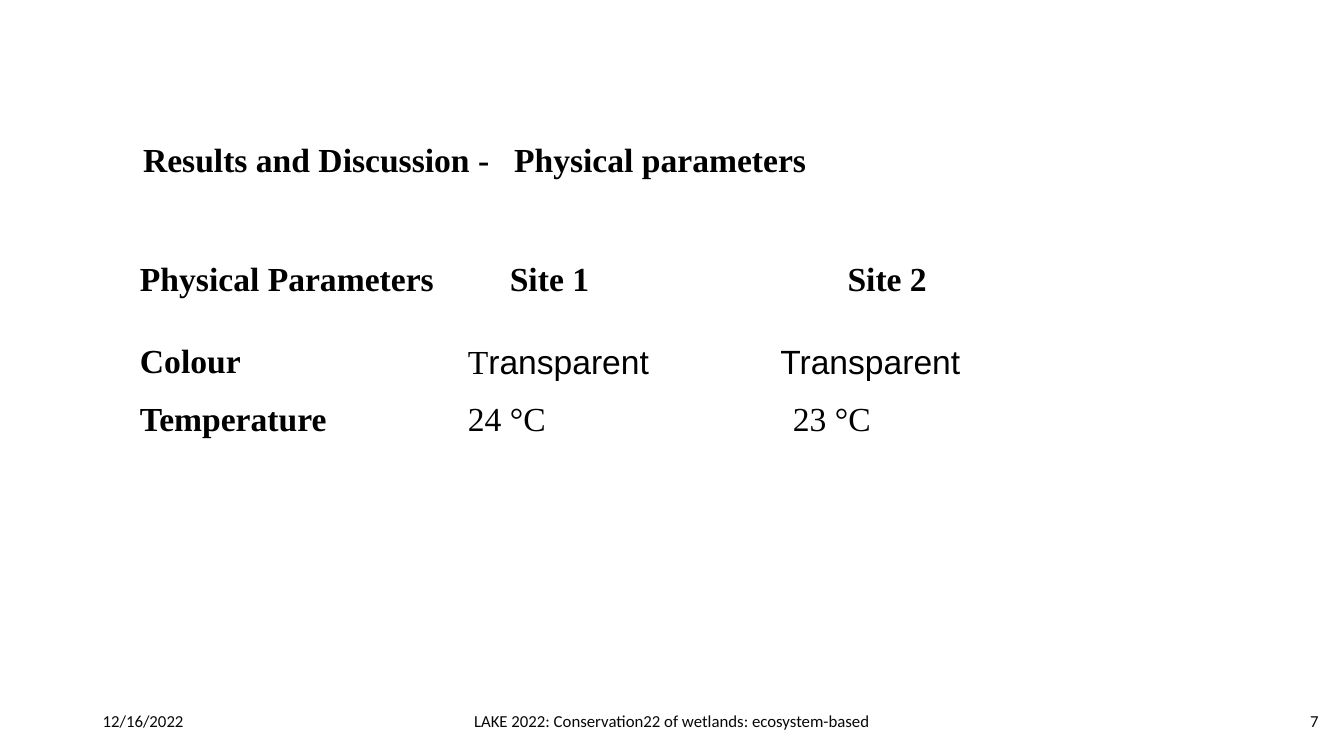
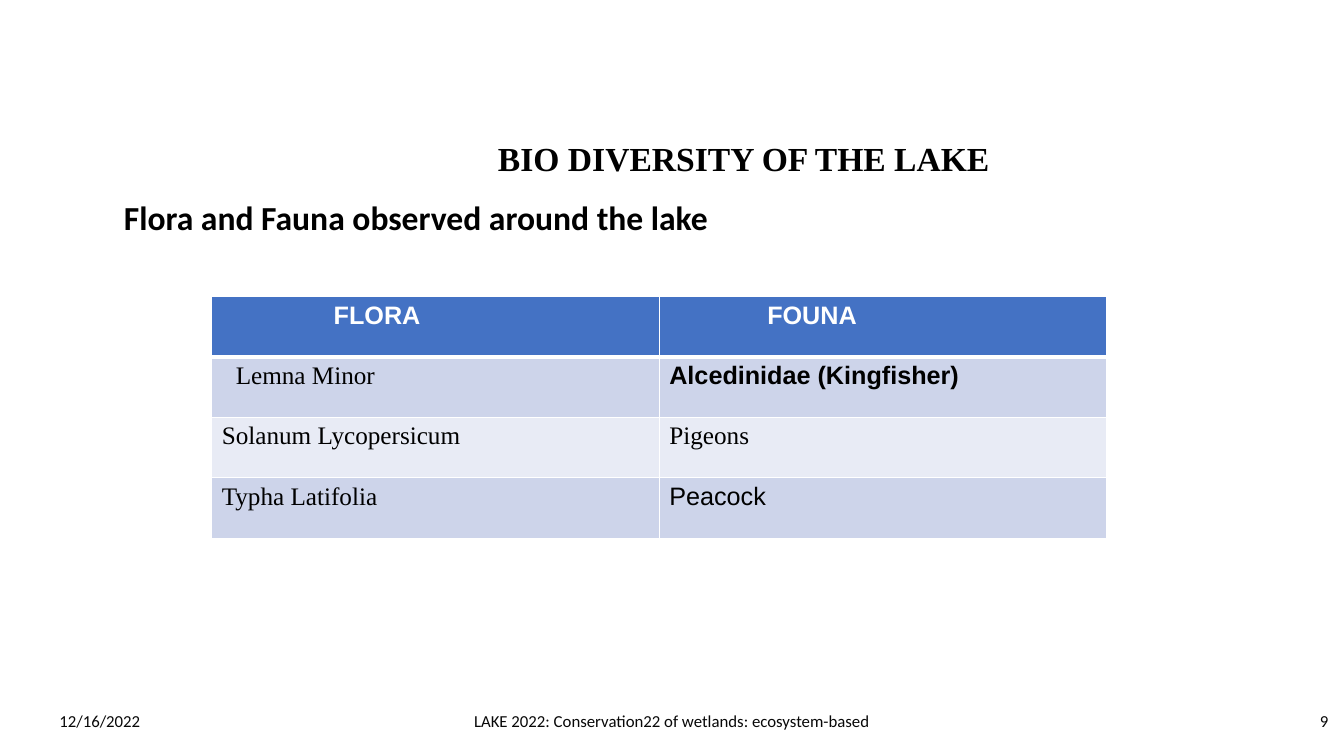
from dataclasses import dataclass
from typing import Optional

from lxml.etree import SubElement
from pptx import Presentation
from pptx.dml.color import RGBColor
from pptx.enum.text import MSO_ANCHOR as Anchor, MSO_AUTO_SIZE as AutoSize, PP_ALIGN as Align
from pptx.oxml.ns import qn
from pptx.util import Pt

COLORS = {
    "text": "000000",
    "footer": "080808",
    "white": "FFFFFF",
    "header": "4472C4",
    "band_dark": "CDD4EA",
    "band_light": "E8EBF5",
}
SERIF, SANS, BODY = "Times New Roman", "Arial", "Calibri"
TITLE_ONLY = 5


@dataclass(frozen=True)
class Style:
    font: str
    size: float
    bold: bool = False
    color: str = "text"


@dataclass(frozen=True)
class Box:
    left: float
    top: float
    width: float
    height: float


@dataclass(frozen=True)
class Cell:
    text: str
    style: Style
    indent: float = 0
    spacing: float = 1
    fill: Optional[str] = None
    lead: str = ""  # opening letters, set in the serif font


@dataclass(frozen=True)
class Grid:
    left: float
    top: float
    columns: list[float]
    rows: list[float]
    margin_x: float
    margin_y: float
    ruled: bool = False


HEADING = Style(SERIF, 24, bold=True)
SUBHEADING = Style(BODY, 24, bold=True)
FOOTER = Style(BODY, 12, color="footer")
PLAIN = Style(SERIF, 24)
PLAIN_SANS = Style(SANS, 24)
SPECIES = Style(SERIF, 18)
SPECIES_SANS = Style(SANS, 18)
SPECIES_BOLD = Style(SANS, 18, bold=True)
GROUP = Style(SANS, 18, bold=True, color="white")


def rgb(name: str) -> RGBColor:
    return RGBColor.from_string(COLORS[name])


def set_font(font, style: Style) -> None:
    font.name = style.font
    font.size = Pt(style.size)
    font.bold = style.bold
    font.color.rgb = rgb(style.color)


def add_tab_stop(p, position: float) -> None:
    tabs = SubElement(p._p.get_or_add_pPr(), qn("a:tabLst"))
    SubElement(tabs, qn("a:tab"), pos=str(Pt(position)), algn="l")


def write(sp, text: str, style: Style, align=Align.LEFT, anchor=Anchor.TOP,
          tab: Optional[float] = None) -> None:
    tf = sp.text_frame
    tf.word_wrap = True
    tf.auto_size = AutoSize.NONE
    tf.vertical_anchor = anchor
    p = tf.paragraphs[0]
    p.add_run().text = text
    p.alignment = align
    if tab is not None:
        add_tab_stop(p, tab)
    set_font(p.font, style)


def add_text(s, box: Box, text: str, style: Style, align=Align.LEFT, anchor=Anchor.TOP) -> None:
    sp = s.shapes.add_textbox(Pt(box.left), Pt(box.top), Pt(box.width), Pt(box.height))
    write(sp, text, style, align, anchor)


def set_title(s, box: Box, text: str, anchor=Anchor.TOP, tab: Optional[float] = None) -> None:
    sp = s.shapes.title
    sp.left, sp.top = Pt(box.left), Pt(box.top)
    sp.width, sp.height = Pt(box.width), Pt(box.height)
    write(sp, text, HEADING, anchor=anchor, tab=tab)


def add_footer(s, date_left: float, number_left: float, number: int) -> None:
    parts = [
        (date_left, 216, "12/16/2022", Align.LEFT),
        (318, 324, "LAKE 2022: Conservation22 of wetlands: ecosystem-based", Align.CENTER),
        (number_left, 216, str(number), Align.RIGHT),
    ]
    for left, width, text, align in parts:
        add_text(s, Box(left, 500.4, width, 28.8), text, FOOTER, align, Anchor.MIDDLE)


def set_borders(cell, bottom: float) -> None:
    """Rule all four sides in white, the bottom one with its own weight."""
    tc_pr = cell._tc.get_or_add_tcPr()
    for side, width in (("L", 1), ("R", 1), ("T", 1), ("B", bottom)):
        ln = SubElement(tc_pr, qn(f"a:ln{side}"), w=str(Pt(width)))
        fill = SubElement(ln, qn("a:solidFill"))
        SubElement(fill, qn("a:srgbClr"), val=COLORS["white"])


def fill_cell(cell, item: Cell, grid: Grid) -> None:
    cell.margin_left = cell.margin_right = Pt(grid.margin_x)
    cell.margin_top = cell.margin_bottom = Pt(grid.margin_y)
    if item.fill:
        cell.fill.solid()
        cell.fill.fore_color.rgb = rgb(item.fill)
    else:
        cell.fill.background()
    p = cell.text_frame.paragraphs[0]
    p._p.get_or_add_pPr().set("marL", str(Pt(item.indent)))
    p.line_spacing = item.spacing
    if item.lead:
        r = p.add_run()
        r.text = item.lead
        r.font.name = SERIF
    p.add_run().text = item.text
    set_font(p.font, item.style)


def add_grid(s, grid: Grid, cells: list[list[Cell]]) -> None:
    table = s.shapes.add_table(
        len(grid.rows), len(grid.columns), Pt(grid.left), Pt(grid.top),
        Pt(sum(grid.columns)), Pt(sum(grid.rows))).table
    table.first_row = table.horz_banding = False
    for column, width in zip(table.columns, grid.columns):
        column.width = Pt(width)
    for row, height in zip(table.rows, grid.rows):
        row.height = Pt(height)
    for i, items in enumerate(cells):
        for j, item in enumerate(items):
            cell = table.cell(i, j)
            if grid.ruled:
                set_borders(cell, bottom=3 if i == 0 else 1)
            fill_cell(cell, item, grid)


def add_physical_parameters(prs) -> None:
    s = prs.slides.add_slide(prs.slide_layouts[TITLE_ONLY])
    set_title(s, Box(95, 73.4, 602, 80.6), "Results and Discussion -\tPhysical parameters",
              Anchor.MIDDLE, tab=265)
    grid = Grid(95, 186.5, [228.2, 223.2, 275], [46, 41, 43.2], 5, 0)
    add_grid(s, grid, [
        [Cell("Physical Parameters", HEADING),
         Cell("Site 1", HEADING, indent=36),
         Cell("Site 2", HEADING, indent=54)],
        [Cell("Colour", HEADING, spacing=1.5),
         Cell("ransparent", PLAIN_SANS, 6, 1.5, "white", lead="T"),
         Cell("Transparent", PLAIN_SANS, 6, 1.5, "white")],
        [Cell("Temperature", HEADING, spacing=1.5),
         Cell("24 °C", PLAIN, 6, 1.5),
         Cell("23 °C", PLAIN, 15, 1.5)],
    ])
    add_footer(s, 66.2, 733, 7)


def add_biodiversity(prs) -> None:
    s = prs.slides.add_slide(prs.slide_layouts[TITLE_ONLY])
    set_title(s, Box(348.5, 95, 375, 36), "BIO DIVERSITY OF THE LAKE")
    add_text(s, Box(81.4, 136.8, 435.6, 36), "Flora and Fauna observed around the lake", SUBHEADING)
    grid = Grid(151.2, 211.7, [319.7] * 2, [43.2] * 4, 7.2, 3.6, ruled=True)
    dark, light = "band_dark", "band_light"
    add_grid(s, grid, [
        [Cell("FLORA", GROUP, 80, fill="header"), Cell("FOUNA", GROUP, 70, fill="header")],
        [Cell("Lemna Minor", SPECIES, 10, fill=dark),
         Cell("Alcedinidae (Kingfisher)", SPECIES_BOLD, fill=dark)],
        [Cell("Solanum Lycopersicum", SPECIES, fill=light), Cell("Pigeons", SPECIES, fill=light)],
        [Cell("Typha Latifolia", SPECIES, fill=dark), Cell("Peacock", SPECIES_SANS, fill=dark)],
    ])
    add_footer(s, 35.3, 740, 9)


def main() -> None:
    prs = Presentation()
    prs.slide_width, prs.slide_height = Pt(960), Pt(540)
    add_physical_parameters(prs)
    add_biodiversity(prs)
    prs.save("out.pptx")


if __name__ == "__main__":
    main()
